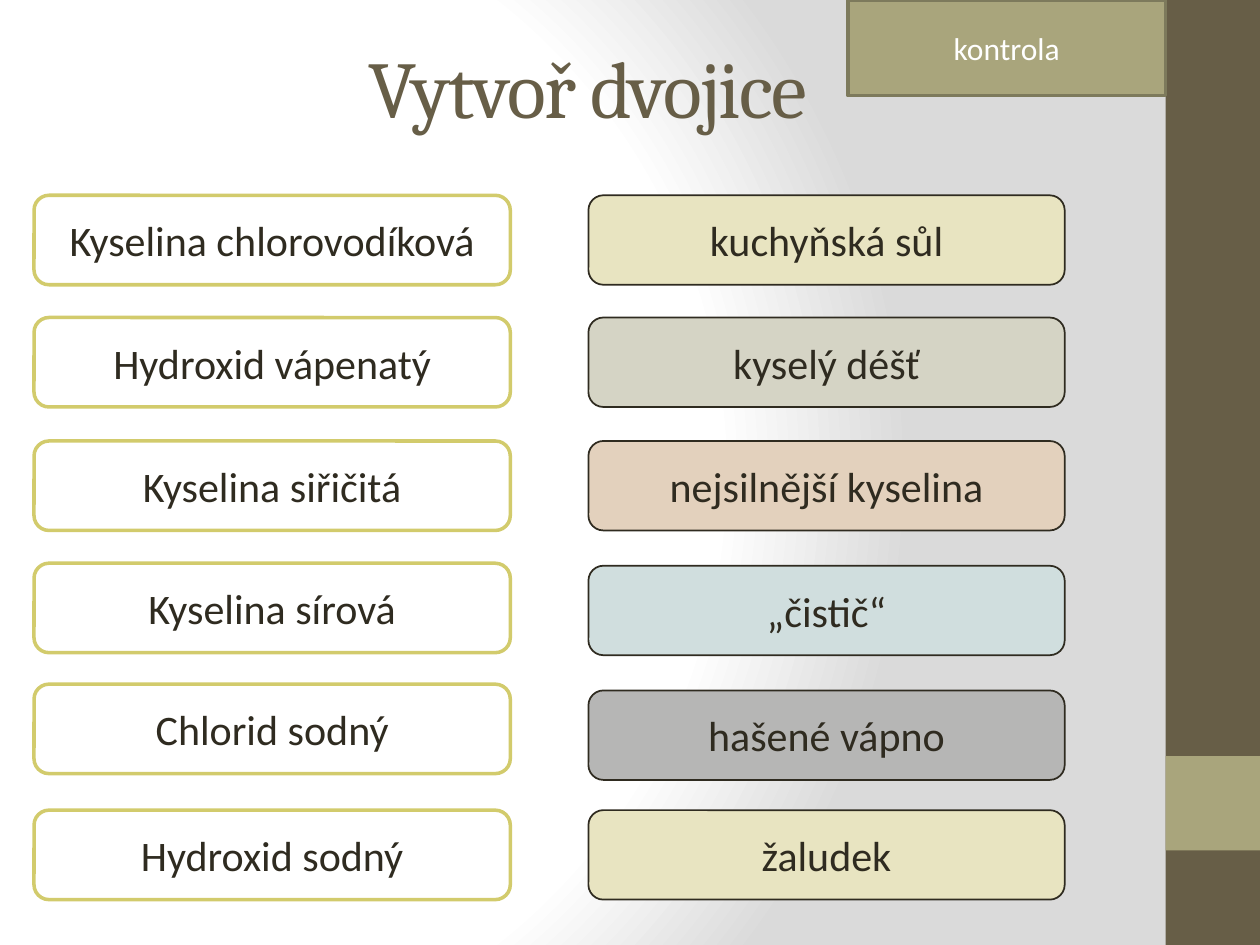
from lxml.etree import SubElement
from pptx import Presentation
from pptx.dml.color import RGBColor
from pptx.enum.shapes import MSO_SHAPE
from pptx.enum.text import MSO_ANCHOR, PP_ALIGN
from pptx.oxml import parse_xml
from pptx.oxml.ns import nsdecls, qn
from pptx.util import Inches, Pt

TITLE = "Vytvoř dvojice"
BUTTON = "kontrola"
LEFT = [
    ("Kyselina chlorovodíková", 1.55),
    ("Hydroxid vápenatý", 2.52),
    ("Kyselina siřičitá", 3.5),
    ("Kyselina sírová", 4.47),
    ("Chlorid sodný", 5.43),
    ("Hydroxid sodný", 6.43),
]
RIGHT = [
    ("kuchyňská sůl", 1.55, "E8E4C1"),
    ("kyselý déšť", 2.52, "D5D4C5"),
    ("nejsilnější kyselina", 3.5, "E3D1BD"),
    ("„čistič“", 4.49, "D0DEDE"),
    ("hašené vápno", 5.48, "B6B6B5"),
    ("žaludek", 6.43, "E8E4C1"),
]
STOPS = [(0, "FFFFFF"), (75, "FFFFFF"), (100, "DADADA")]
FOCUS = {"l": 20, "t": 50, "r": 100, "b": 50}
DARK, BROWN, OLIVE, LIME = "2F2B20", "675E47", "A9A57C", "D2CB6C"
WIDE, HIGH = 3.78, 0.71


def color(code):
    return RGBColor.from_string(code)


def write(shape, text, size, font, ink):
    frame = shape.text_frame
    frame.word_wrap = True
    frame.vertical_anchor = MSO_ANCHOR.MIDDLE
    frame.text = text
    line = frame.paragraphs[0]
    line.alignment = PP_ALIGN.CENTER
    run = line.runs[0]
    run.font.size = Pt(size)
    run.font.name = font
    run.font.color.rgb = color(ink)
    return run


def box(slide, kind, place, fill, edge=None, width=1):
    shape = slide.shapes.add_shape(kind, *map(Inches, place))
    shape.shadow.inherit = False
    shape.fill.solid()
    shape.fill.fore_color.rgb = color(fill)
    if edge:
        shape.line.color.rgb = color(edge)
        shape.line.width = Pt(width)
    else:
        shape.line.fill.background()
    return shape


def card(slide, left, top, text, fill, edge, width):
    place = (left, top, WIDE, HIGH)
    shape = box(slide, MSO_SHAPE.ROUNDED_RECTANGLE, place, fill, edge, width)
    write(shape, text, 24, "Calibri", DARK)


def shade(slide):
    slide.background.fill.solid()
    solid = next(slide.element.iter(qn("a:solidFill")))
    grad = parse_xml(f'<a:gradFill {nsdecls("a")} rotWithShape="1"/>')
    stops = SubElement(grad, qn("a:gsLst"))
    for pos, code in STOPS:
        stop = SubElement(stops, qn("a:gs"), pos=str(pos * 1000))
        SubElement(stop, qn("a:srgbClr"), val=code)
    round_ = SubElement(grad, qn("a:path"), {"path": "circle"})
    sides = {side: str(part * 1000) for side, part in FOCUS.items()}
    SubElement(round_, qn("a:fillToRect"), sides)
    solid.getparent().replace(solid, grad)


def main():
    deck = Presentation()
    deck.slide_width, deck.slide_height = Inches(10), Inches(7.5)
    slide = deck.slides.add_slide(deck.slide_layouts[6])
    shade(slide)

    box(slide, MSO_SHAPE.RECTANGLE, (9.25, 0, 0.75, 7.5), BROWN)
    box(slide, MSO_SHAPE.RECTANGLE, (9.25, 6, 0.75, 0.75), OLIVE)

    title = slide.shapes.add_textbox(*map(Inches, (0.5, 0.3, 8.33, 0.77)))
    run = write(title, TITLE, 46, "Cambria", BROWN)
    run.font._element.set("spc", "-100")

    for text, top in LEFT:
        card(slide, 0.27, top, text, "FFFFFF", LIME, 2)
    for text, top, fill in RIGHT:
        card(slide, 4.67, top, text, fill, DARK, 1)

    place = (6.73, 0, 2.52, 0.76)
    button = box(slide, MSO_SHAPE.RECTANGLE, place, OLIVE, "7D7A5C", 2)
    write(button, BUTTON, 18, "Calibri", "FFFFFF")

    deck.save("out.pptx")


if __name__ == "__main__":
    main()
